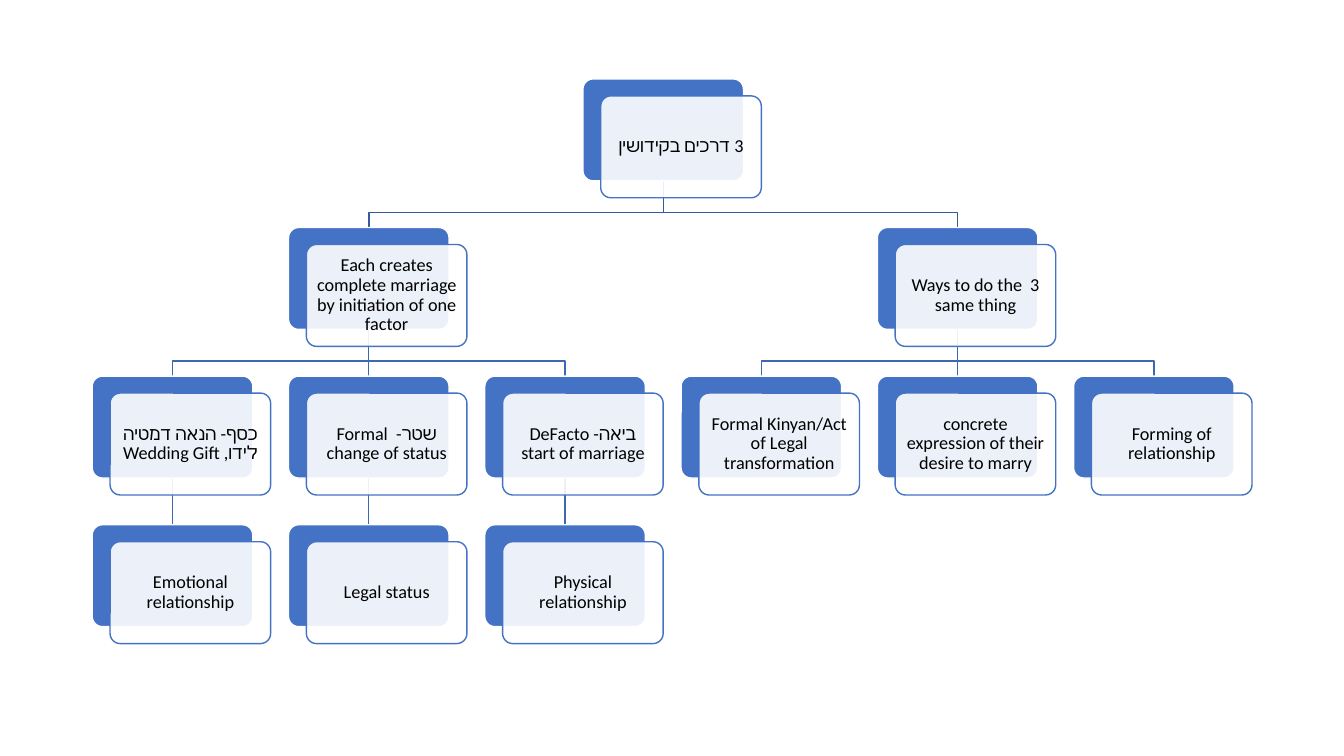
from dataclasses import dataclass

from lxml.etree import SubElement
from pptx import Presentation
from pptx.dml.color import RGBColor
from pptx.enum.shapes import MSO_CONNECTOR as Link, MSO_SHAPE as Preset
from pptx.enum.text import MSO_ANCHOR as Anchor, PP_ALIGN as Align
from pptx.oxml.ns import qn
from pptx.slide import Slide
from pptx.util import Pt

BLUE = RGBColor(0x44, 0x72, 0xC4)
ROOT_LINK = RGBColor(0x36, 0x5B, 0x9D)
BRANCH_LINK = RGBColor(0x3E, 0x67, 0xB2)
WHITE = RGBColor(0xFF, 0xFF, 0xFF)
BLACK = RGBColor(0x00, 0x00, 0x00)

LEFT, TOP = 65.9, 56.4
COLUMN_STEP, ROW_STEP = 140.2, 106.15
CARD_WIDTH, CARD_HEIGHT = 114.7, 72.8
SHIFT_X, SHIFT_Y = 12.75, 12.1
BEND = 22.4

ROOT, FACTORS, WAYS = (2.5, 0), (1, 1), (4, 1)
TREE = {
    ROOT: ("3 דרכים בקידושין", None),
    FACTORS: ("Each creates complete marriage by initiation of one factor", ROOT),
    WAYS: ("3  Ways to do the same thing", ROOT),
    (0, 2): ("כסף- הנאה דמטיה לידו, Wedding Gift", FACTORS),
    (1, 2): ("שטר-  Formal change of status", FACTORS),
    (2, 2): ("ביאה- DeFacto start of marriage", FACTORS),
    (3, 2): ("Formal Kinyan/Act of Legal transformation", WAYS),
    (4, 2): ("concrete expression of their desire to marry", WAYS),
    (5, 2): ("Forming of relationship", WAYS),
    (0, 3): ("Emotional relationship", (0, 2)),
    (1, 3): ("Legal status", (1, 2)),
    (2, 3): ("Physical relationship", (2, 2)),
}


def apply(target, values):
    for name, value in values.items():
        setattr(target, name, value)


@dataclass
class TreeChart:
    """Draws the cards and links of a tree on one slide."""

    page: Slide
    font: str = "Calibri"
    size: float = 13
    line_width: float = 1

    def corner(self, place):
        column, row = place
        return LEFT + column * COLUMN_STEP, TOP + row * ROW_STEP

    def stroke(self, line, color):
        line.color.rgb = color
        line.width = Pt(self.line_width)

    def link(self, parent, child):
        start_x, start_y = self.corner(parent)
        end_x, end_y = self.corner(child)
        start_x, end_x = start_x + CARD_WIDTH / 2, end_x + CARD_WIDTH / 2
        start_y += CARD_HEIGHT
        color = ROOT_LINK if parent == ROOT else BRANCH_LINK
        if start_x == end_x:
            line = self.page.shapes.add_connector(
                Link.STRAIGHT, Pt(start_x), Pt(start_y), Pt(end_x), Pt(end_y))
            self.stroke(line.line, color)
            SubElement(line._element.spPr, qn("a:effectLst"))
            return
        bend_y = start_y + BEND
        builder = self.page.shapes.build_freeform(Pt(start_x), Pt(start_y))
        corners = [(start_x, bend_y), (end_x, bend_y), (end_x, end_y)]
        builder.add_line_segments([(Pt(x), Pt(y)) for x, y in corners], close=False)
        elbow = builder.convert_to_shape()
        elbow.fill.background()
        elbow.shadow.inherit = False
        self.stroke(elbow.line, color)

    def panel(self, left, top, fill, outline):
        box = self.page.shapes.add_shape(
            Preset.ROUNDED_RECTANGLE, Pt(left), Pt(top), Pt(CARD_WIDTH), Pt(CARD_HEIGHT))
        box.adjustments[0] = 0.1
        box.shadow.inherit = False
        box.fill.solid()
        box.fill.fore_color.rgb = fill
        self.stroke(box.line, outline)
        return box

    def card(self, place, text):
        left, top = self.corner(place)
        self.panel(left, top, BLUE, WHITE)
        front = self.panel(left + SHIFT_X, top + SHIFT_Y, WHITE, BLUE)
        tint = front._element.spPr.find(qn("a:solidFill")).find(qn("a:srgbClr"))
        SubElement(tint, qn("a:alpha"), val="90000")
        self.label(front.text_frame, text)

    def label(self, frame, text):
        margins = dict.fromkeys(
            ("margin_left", "margin_right", "margin_top", "margin_bottom"), Pt(3.8))
        apply(frame, {"word_wrap": True, "vertical_anchor": Anchor.MIDDLE, **margins})
        para = frame.paragraphs[0]
        apply(para, {"alignment": Align.CENTER, "line_spacing": 0.9})
        para._p.get_or_add_pPr().set("rtl", "1")
        span = para.add_run()
        span.text = text
        apply(span.font, {"name": self.font, "size": Pt(self.size)})
        span.font.color.rgb = BLACK
        SubElement(span._r.get_or_add_rPr(), qn("a:cs"), typeface=self.font)


def main():
    deck = Presentation()
    apply(deck, {"slide_width": Pt(960), "slide_height": Pt(540)})
    chart = TreeChart(deck.slides.add_slide(deck.slide_layouts[6]))
    for place, (text, parent) in TREE.items():
        if parent:
            chart.link(parent, place)
    for place, (text, parent) in TREE.items():
        chart.card(place, text)
    deck.save("out.pptx")


if __name__ == "__main__":
    main()
